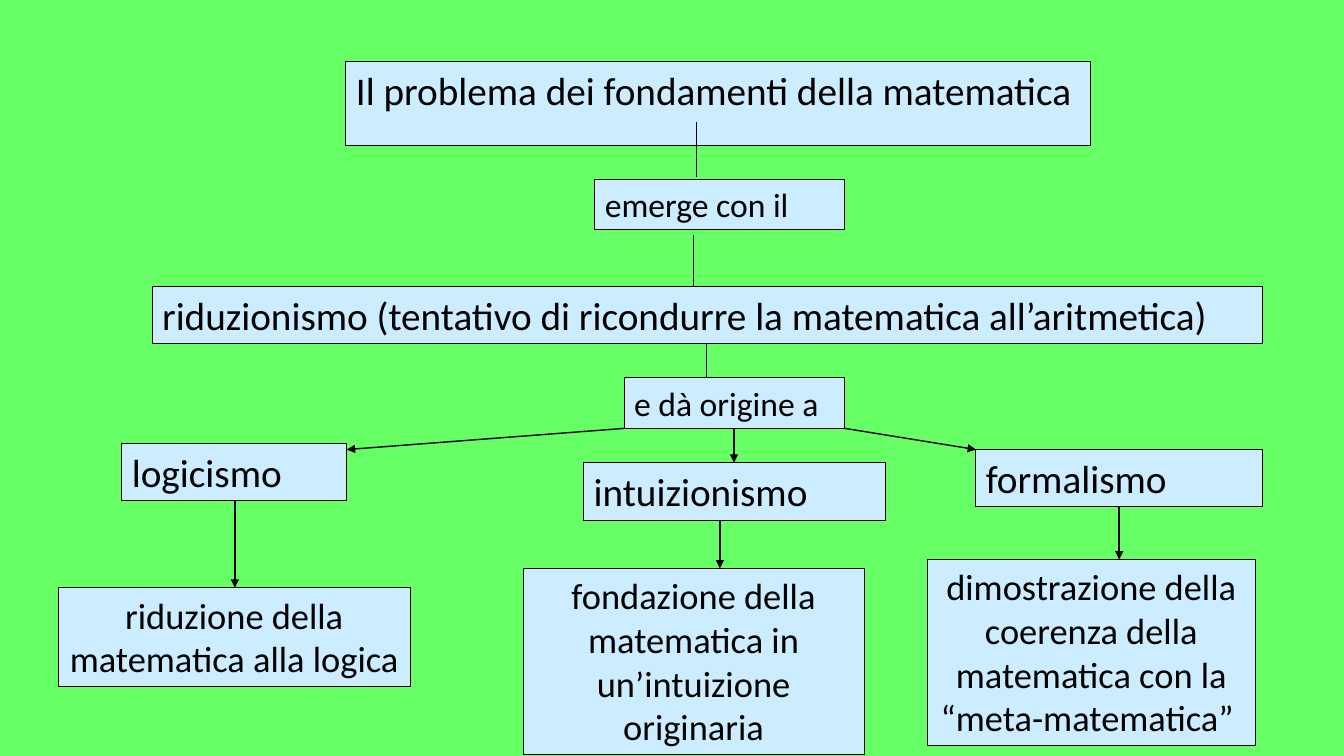
from lxml import etree
from pptx import Presentation, util as u
from pptx.dml.color import RGBColor
from pptx.enum import shapes, text
from pptx.oxml import ns

PX = 9144
BLACK = "000000"
PALE_BLUE = "CCECFF"
GREEN = "66FF66"

TITLE = ("Il problema dei fondamenti della matematica", 343, 61, 739, 57)
STEPS = [
    ("emerge con il", 590, 178, 248, 50, 24),
    ("riduzionismo (tentativo di ricondurre la matematica all’aritmetica)", 151, 284, 1101, 57, 28),
    ("e dà origine a", 619, 375, 219, 50, 24),
]
SCHOOLS = [
    ("logicismo", 121, 440, 223, 57),
    ("intuizionismo", 579, 459, 299, 57),
    ("formalismo", 968, 446, 284, 57),
]
THESES = [
    ("riduzione della matematica alla logica", 58, 583, 349, 98),
    ("fondazione della matematica in un’intuizione originaria", 519, 564, 338, 185),
    ("dimostrazione della coerenza della matematica con la “meta-matematica” ", 920, 555, 325, 185),
]
LINKS = [(691, 121, 691, 176), (688, 233, 688, 284), (701, 341, 701, 375)]
ARROWS = [
    (619, 425, 344, 446), (728, 425, 728, 459), (838, 425, 968, 446),
    (233, 497, 233, 583), (714, 516, 714, 564), (1110, 503, 1110, 555),
]


def px(length):
    return u.Emu(length * PX)


def color(value):
    return RGBColor.from_string(value)


def paint(target, value):
    target.solid()
    target.fore_color.rgb = color(value)


def format_box(shape, words, size, alignment=text.PP_ALIGN.LEFT):
    paint(shape.fill, PALE_BLUE)
    paint(shape.line.fill, BLACK)
    shape.line.width = u.Pt(0.75)
    shape.shadow.inherit = False
    frame = shape.text_frame
    frame.text = words
    frame.word_wrap = True
    frame.auto_size = text.MSO_AUTO_SIZE.SHAPE_TO_FIT_TEXT
    frame.vertical_anchor = text.MSO_ANCHOR.TOP
    paragraph = frame.paragraphs[0]
    paragraph.alignment = alignment
    paragraph.line_spacing = 1.0
    font = paragraph.runs[0].font
    font.name = "Calibri"
    font.size = u.Pt(size)
    font.color.rgb = color(BLACK)


def place_title(slide, words, left, top, width, height):
    title = slide.shapes.title
    title.left, title.top = px(left), px(top)
    title.width, title.height = px(width), px(height)
    format_box(title, words, 28)


def add_box(slide, words, left, top, width, height, size, alignment=text.PP_ALIGN.LEFT):
    shape = slide.shapes.add_shape(
        shapes.MSO_SHAPE.RECTANGLE, px(left), px(top), px(width), px(height))
    format_box(shape, words, size, alignment)


def add_link(slide, points, arrow=False):
    connector = slide.shapes.add_connector(
        shapes.MSO_CONNECTOR.STRAIGHT, *map(px, points))
    paint(connector.line.fill, BLACK)
    connector.line.width = u.Pt(1)
    if arrow:
        etree.SubElement(connector.line._get_or_add_ln(), ns.qn("a:tailEnd"), type="triangle")
    etree.SubElement(connector._element.spPr, ns.qn("a:effectLst"))


def main():
    presentation = Presentation()
    presentation.slide_width, presentation.slide_height = px(1333), px(750)
    slide = presentation.slides.add_slide(presentation.slide_layouts[5])
    paint(slide.background.fill, GREEN)
    place_title(slide, *TITLE)
    for step in STEPS:
        add_box(slide, *step)
    for school in SCHOOLS:
        add_box(slide, *school, 28)
    for thesis in THESES:
        add_box(slide, *thesis, 26, text.PP_ALIGN.CENTER)
    for points in LINKS:
        add_link(slide, points)
    for points in ARROWS:
        add_link(slide, points, arrow=True)
    presentation.save("out.pptx")


if __name__ == "__main__":
    main()
